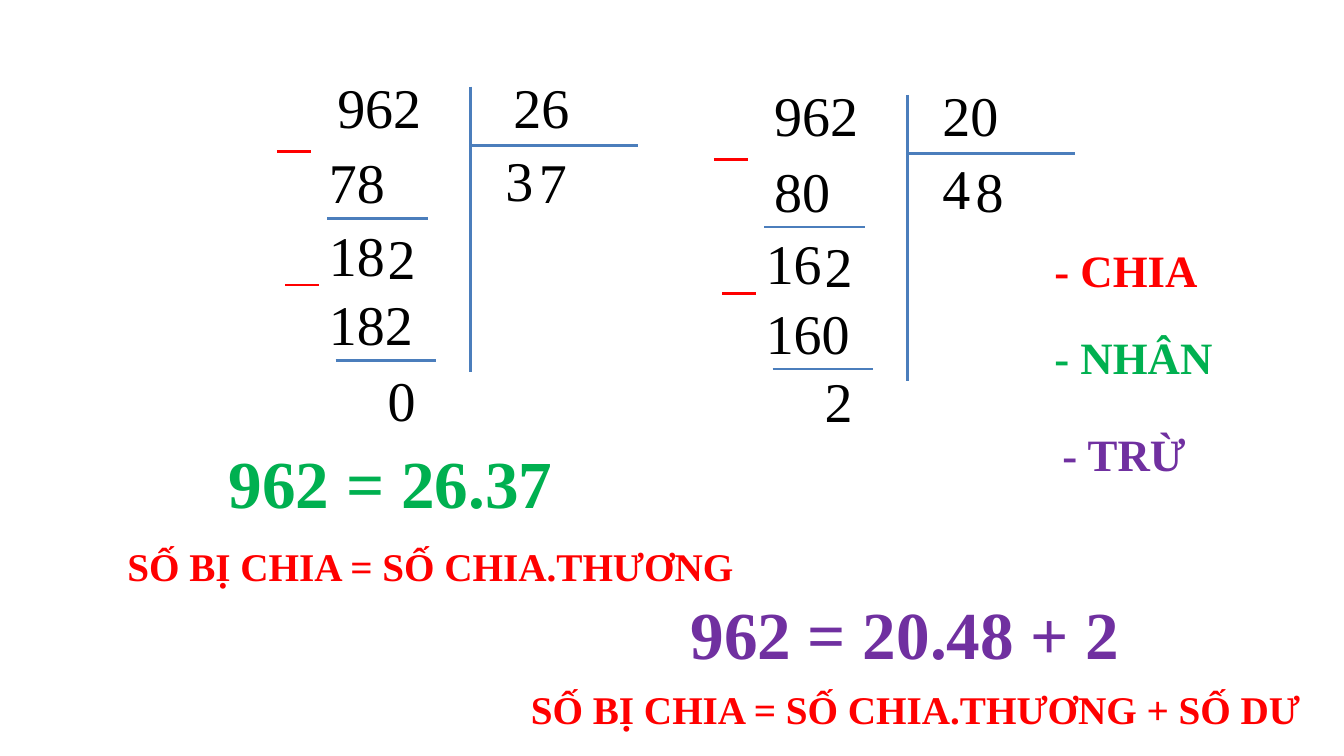
"""Build a slide comparing exact long division with division with a remainder."""
import pptx
import pptx.dml.color
import pptx.enum.shapes
import pptx.enum.text
import pptx.util
from pptx.util import Cm

BLACK = pptx.dml.color.RGBColor(0x00, 0x00, 0x00)
BLUE = pptx.dml.color.RGBColor(0x4B, 0x7E, 0xBC)
RED = pptx.dml.color.RGBColor(0xFF, 0x00, 0x00)
GREEN = pptx.dml.color.RGBColor(0x00, 0xB0, 0x50)
PURPLE = pptx.dml.color.RGBColor(0x70, 0x30, 0xA0)
FONT = "Times New Roman"
DIGIT_SIZE = 40
DIGIT_HEIGHT = 1.96

HEAD_PLACES = {
    "dividend": (-3.6, -0.48, 3.18),
    "divisor": (0.84, -0.48, 2.33),
}
STEP_PLACES = {
    "quotient tens": (0.64, 1.35, 2.54),
    "first product": (-3.81, 1.42, 2.12),
    "first difference": (-3.81, 3.25, 2.12),
    "lowered digit": (-2.33, 3.33, 1.48),
    "quotient units": (1.48, 1.42, 2.22),
    "second product": (-3.81, 5.0, 4.45),
    "remainder": (-2.33, 6.91, 2.75),
}
HEAD_LINES = [(0, 0, 0, 7.2, BLUE), (0, 1.48, 4.23, 1.48, BLUE)]
STEP_LINES = [
    (-4.87, 1.63, -4.02, 1.63, RED),
    (-3.6, 3.33, -1.06, 3.33, BLUE),
    (-4.66, 5.0, -3.81, 5.0, RED),
    (-3.39, 6.91, -0.85, 6.91, BLUE),
]
DIVISIONS = [
    {
        "corner": (11.85, 2.18),
        "head": ["962", "26"],
        "steps": ["3", "78", "18", "2", "7", "182", "0"],
        "nudges": {},
    },
    {
        "corner": (22.86, 2.39),
        "head": ["962", "20"],
        "steps": ["4", "80", "16", "2", "8", "160", "2"],
        "nudges": {
            "divisor": (-0.2, 0),
            "first product": (0.21, 0),
            "remainder": (0, -0.2),
        },
    },
]
STATEMENTS = [
    ("962 = 26.37", 5.51, 11.0, 9.53, 2.31, 48, GREEN),
    ("962 = 20.48 + 2", 17.15, 14.81, 11.63, 2.29, 48, PURPLE),
    ("SỐ BỊ CHIA = SỐ CHIA.THƯƠNG", 2.96, 13.55, 16.31, 1.45, 28, RED),
    ("SỐ BỊ CHIA = SỐ CHIA.THƯƠNG + SỐ DƯ", 13.13, 17.15, 20.95, 1.45, 28, RED),
    (" - CHIA", 26.04, 5.99, 4.45, 1.63, 32, RED),
    (" - NHÂN", 26.04, 8.18, 5.72, 1.63, 32, GREEN),
    (" - TRỪ", 26.24, 10.64, 4.45, 1.63, 32, PURPLE),
]


def add_text(shapes, text, left, top, width, height, size, color, bold=True):
    box = shapes.add_textbox(Cm(left), Cm(top), Cm(width), Cm(height))
    box.text_frame.word_wrap = True
    box.text_frame.auto_size = pptx.enum.text.MSO_AUTO_SIZE.SHAPE_TO_FIT_TEXT
    para = box.text_frame.paragraphs[0]
    para.text = text
    para.font.name = FONT
    para.font.size = pptx.util.Pt(size)
    para.font.bold = bold
    para.font.color.rgb = color


def add_part(shapes, division, texts, places, lines):
    corner_x, corner_y = division["corner"]
    for text, (name, (x, y, width)) in zip(texts, places.items()):
        nudge_x, nudge_y = division["nudges"].get(name, (0, 0))
        add_text(shapes, text, corner_x + x + nudge_x, corner_y + y + nudge_y,
                 width, DIGIT_HEIGHT, DIGIT_SIZE, BLACK, bold=False)
    for x1, y1, x2, y2, color in lines:
        line = shapes.add_connector(
            pptx.enum.shapes.MSO_CONNECTOR.STRAIGHT,
            Cm(corner_x + x1), Cm(corner_y + y1), Cm(corner_x + x2), Cm(corner_y + y2))
        line.line.color.rgb = color
        line.line.width = pptx.util.Pt(2)
        properties = line._element.spPr
        properties.append(properties.makeelement(pptx.oxml.ns.qn("a:effectLst"), {}))


def main():
    deck = pptx.Presentation()
    deck.slide_width, deck.slide_height = Cm(33.87), Cm(19.05)
    page = deck.slides.add_slide(deck.slide_layouts[6])
    for division in DIVISIONS:
        head = page.shapes.add_group_shape()
        add_part(head.shapes, division, division["head"], HEAD_PLACES, HEAD_LINES)
        add_part(page.shapes, division, division["steps"], STEP_PLACES, STEP_LINES)
    for statement in STATEMENTS:
        add_text(page.shapes, *statement)
    deck.save("out.pptx")


if __name__ == "__main__":
    main()
